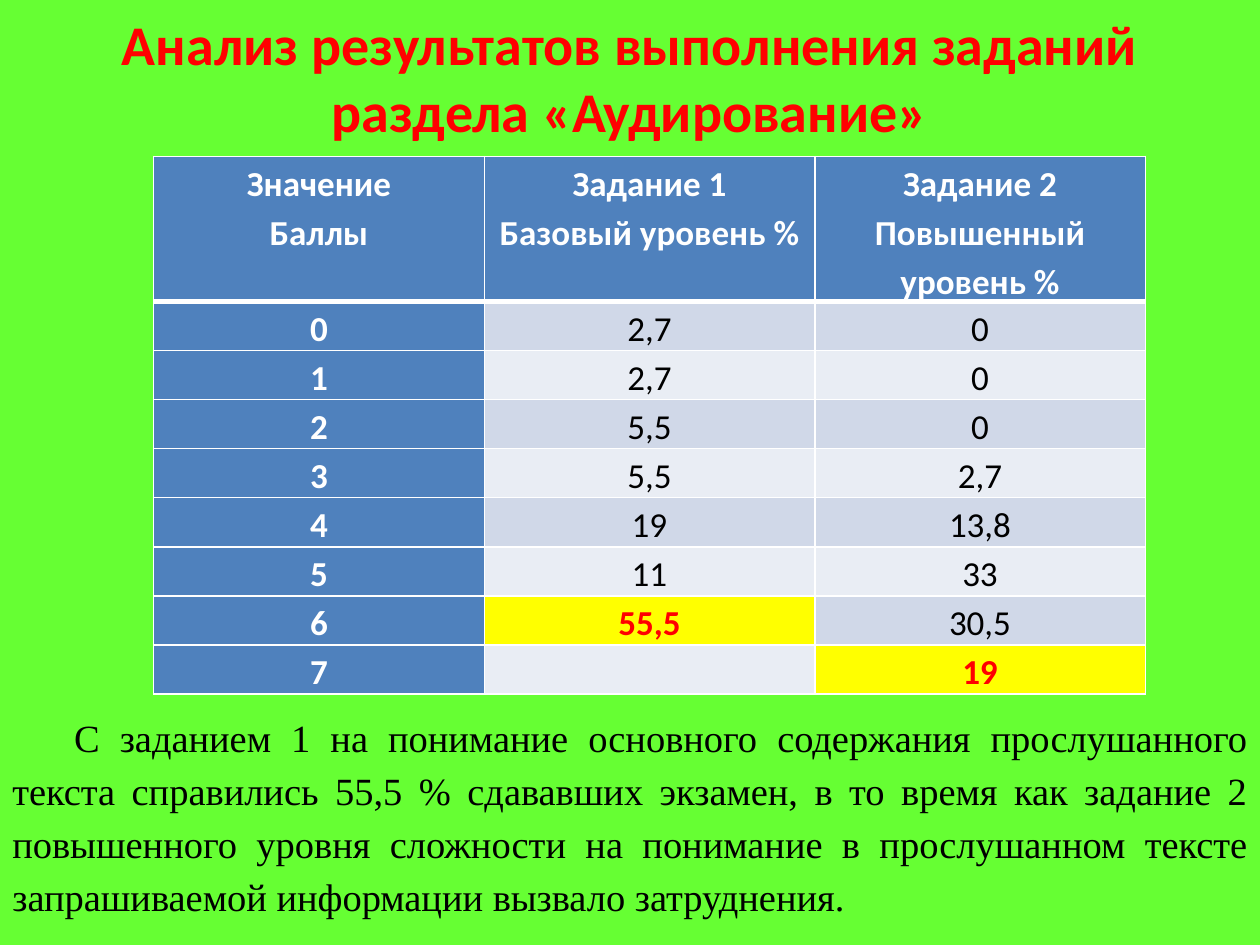
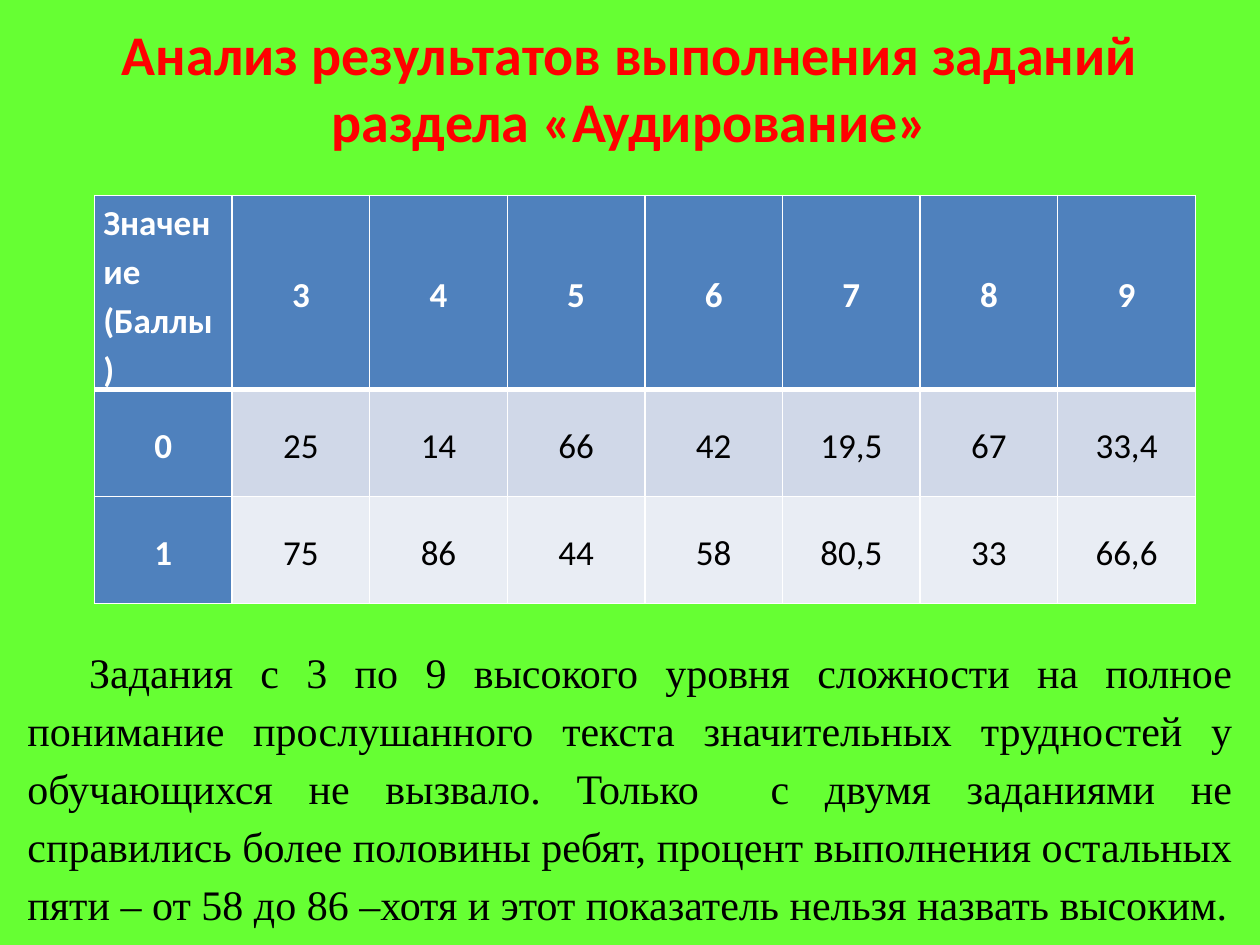
import pptx
import pptx.dml.color
import pptx.enum.text
import pptx.oxml
import pptx.oxml.ns
import pptx.util

Inches = pptx.util.Inches
Pt = pptx.util.Pt
RGBColor = pptx.dml.color.RGBColor
Align = pptx.enum.text.PP_ALIGN
Anchor = pptx.enum.text.MSO_ANCHOR

GREEN = RGBColor(0x66, 0xFF, 0x33)
RED = RGBColor(0xFF, 0x00, 0x00)
YELLOW = RGBColor(0xFF, 0xFF, 0x00)
WHITE = RGBColor(0xFF, 0xFF, 0xFF)
BLACK = RGBColor(0x00, 0x00, 0x00)
BLUE = RGBColor(0x4F, 0x81, 0xBD)
BANDS = (RGBColor(0xD0, 0xD8, 0xE8), RGBColor(0xE9, 0xED, 0xF4))

SLIDE_WIDTH, SLIDE_HEIGHT = Inches(10), Inches(7.5)
HEADING_FONT, BODY_FONT = "Calibri", "Times New Roman"
LINE_SPACING = 1.15
HEADING = "Анализ результатов выполнения заданий раздела «Аудирование»"

LEVEL_ROWS = [
    ["Значение\nБаллы", "Задание 1\nБазовый уровень %", "Задание 2\nПовышенный уровень %"],
    ["0", "2,7", "0"],
    ["1", "2,7", "0"],
    ["2", "5,5", "0"],
    ["3", "5,5", "2,7"],
    ["4", "19", "13,8"],
    ["5", "11", "33"],
    ["6", "55,5", "30,5"],
    ["7", "", "19"],
]
BEST_RESULTS = {(7, 1), (8, 2)}
LEVEL_COMMENT = (
    "С заданием 1 на понимание основного содержания прослушанного текста "
    "справились 55,5 % сдававших экзамен, в то время как задание 2 повышенного "
    "уровня сложности на понимание в прослушанном тексте запрашиваемой "
    "информации вызвало затруднения."
)

TASK_ROWS = [
    ["Значение (Баллы)", "3", "4", "5", "6", "7", "8", "9"],
    ["0", "25", "14", "66", "42", "19,5", "67", "33,4"],
    ["1", "75", "86", "44", "58", "80,5", "33", "66,6"],
]
TASK_COMMENT = (
    "Задания с 3 по 9 высокого уровня сложности на полное понимание "
    "прослушанного текста значительных трудностей у обучающихся не вызвало. "
    "Только  с двумя заданиями не справились более половины ребят, процент "
    "выполнения остальных пяти – от 58 до 86 –хотя и этот показатель нельзя "
    "назвать высоким."
)


def style_text(frame, font_name, size, color, bold=False, align=Align.CENTER, spacing=None):
    for paragraph in frame.paragraphs:
        paragraph.alignment = align
        paragraph.line_spacing = spacing
        for run in paragraph.runs:
            run.font.name = font_name
            run.font.size = Pt(size)
            run.font.bold = bold
            run.font.color.rgb = color


def add_text(slide, text, left, top, width, height):
    box = slide.shapes.add_textbox(
        int(SLIDE_WIDTH * left), Inches(top), int(SLIDE_WIDTH * width), Inches(height)
    )
    box.text_frame.word_wrap = True
    box.text_frame.text = text
    return box.text_frame


def add_heading(slide, height):
    frame = add_text(slide, HEADING, 0.05, 0.3, 0.9, height)
    frame.vertical_anchor = Anchor.MIDDLE
    frame.margin_bottom = Inches(0.52)
    style_text(frame, HEADING_FONT, 32, RED, bold=True)


def add_comment(slide, text, size, margin, top, height):
    frame = add_text(slide, text, margin, top, 1 - 2 * margin, height)
    frame.auto_size = pptx.enum.text.MSO_AUTO_SIZE.SHAPE_TO_FIT_TEXT
    style_text(frame, BODY_FONT, size, BLACK, align=Align.JUSTIFY, spacing=LINE_SPACING)
    properties = frame.paragraphs[0]._p.get_or_add_pPr()
    properties.set("indent", str(Inches(0.49)))


def add_borders(cell, widths):
    properties = cell._tc.get_or_add_tcPr()
    for side, width in widths.items():
        properties.append(pptx.oxml.parse_xml(
            f'<a:ln{side} {pptx.oxml.ns.nsdecls("a")} w="{Pt(width)}">'
            f'<a:solidFill><a:srgbClr val="{WHITE}"/></a:solidFill></a:ln{side}>'
        ))


def cell_colors(row, column, highlights):
    if row == 0 or column == 0:
        return BLUE, WHITE
    if (row, column) in highlights:
        return YELLOW, RED
    return BANDS[(row - 1) % 2], BLACK


def add_results(slide, rows, left, top, width, header_height, row_height,
                anchor=Anchor.TOP, highlights=()):
    height = header_height + row_height * (len(rows) - 1)
    table = slide.shapes.add_table(
        len(rows), len(rows[0]), Inches(left), Inches(top), Inches(width), Inches(height)
    ).table
    table.first_col = True
    for row, values in enumerate(rows):
        table.rows[row].height = Inches(row_height if row else header_height)
        for column, value in enumerate(values):
            cell = table.cell(row, column)
            cell.margin_left = cell.margin_right = Inches(0.07)
            cell.margin_top = cell.margin_bottom = 0
            cell.vertical_anchor = anchor if row or column else Anchor.TOP
            add_borders(cell, {"L": 1, "R": 1, "B": 1} if row else {"L": 1, "R": 1, "T": 1, "B": 3})
            fill_color, text_color = cell_colors(row, column, highlights)
            cell.fill.solid()
            cell.fill.fore_color.rgb = fill_color
            cell.text_frame.text = value
            style_text(cell.text_frame, HEADING_FONT, 20, text_color,
                       bold=text_color != BLACK, spacing=LINE_SPACING)
    return table


def add_green_slide(deck):
    slide = deck.slides.add_slide(deck.slide_layouts[6])
    slide.background.fill.solid()
    slide.background.fill.fore_color.rgb = GREEN
    return slide


def main():
    deck = pptx.Presentation()
    deck.slide_width, deck.slide_height = SLIDE_WIDTH, SLIDE_HEIGHT

    levels = add_green_slide(deck)
    add_heading(levels, 1.09)
    add_results(levels, LEVEL_ROWS, 1.22, 1.24, 7.87, 1.1, 0.39, highlights=BEST_RESULTS)
    add_comment(levels, LEVEL_COMMENT, 22, 0, 5.56, 1.77)

    tasks = add_green_slide(deck)
    task_table = add_results(tasks, TASK_ROWS, 0.75, 1.55, 8.74, 1.54, 0.85, Anchor.MIDDLE)
    task_table.cell(0, 0).text_frame.paragraphs[0].alignment = Align.JUSTIFY
    add_heading(tasks, 1.25)
    add_comment(tasks, TASK_COMMENT, 24, 0.012, 5.02, 2.89)

    deck.save("out.pptx")


if __name__ == "__main__":
    main()
